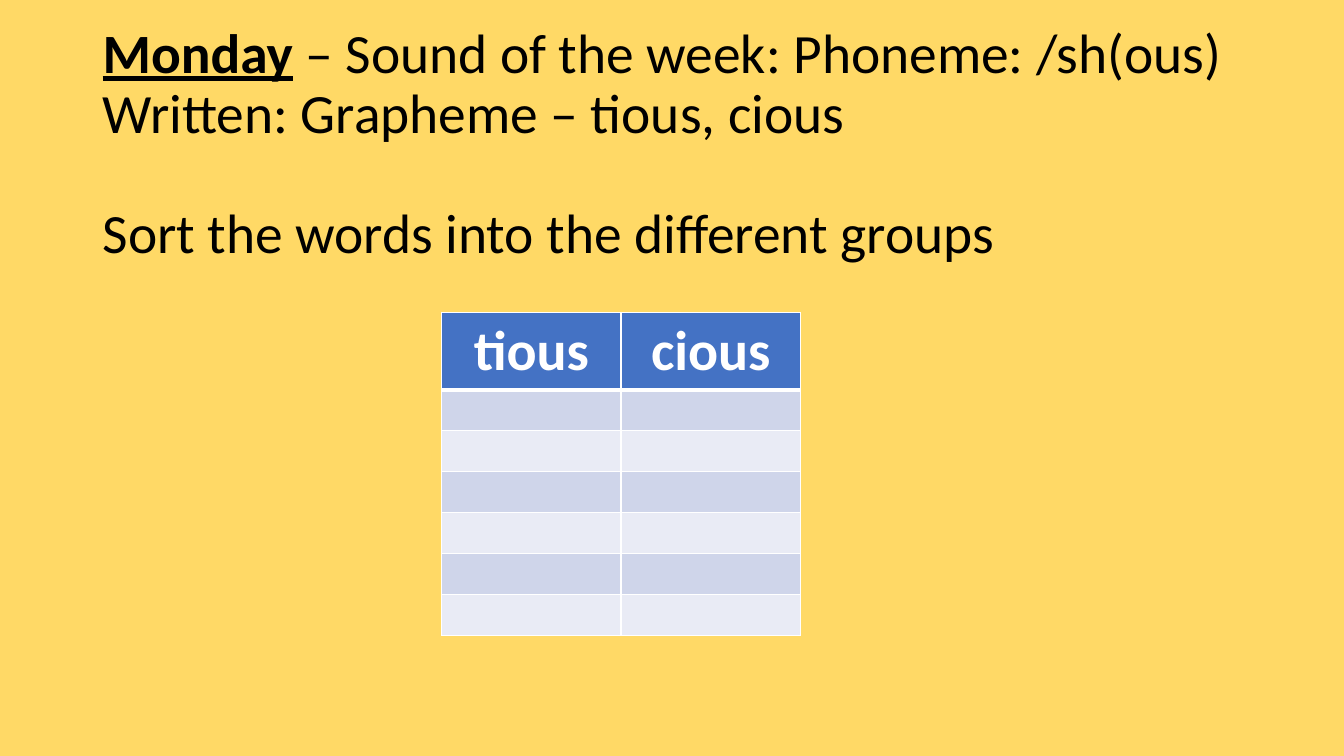
import pptx
import pptx.dml.color
import pptx.enum.text
import pptx.oxml.ns
import pptx.util
from lxml import etree
from pptx.dml.color import RGBColor
from pptx.util import Inches

BACKGROUND = RGBColor(0xFF, 0xD9, 0x66)
BLACK = RGBColor(0x00, 0x00, 0x00)
WHITE = RGBColor(0xFF, 0xFF, 0xFF)
HEADER_BLUE = RGBColor(0x44, 0x72, 0xC4)
BANDS = (RGBColor(0xCF, 0xD5, 0xEA), RGBColor(0xE9, 0xEB, 0xF5))

FONT = "Calibri"
TITLE_SIZE = 39.6
HEADER_SIZE = 40
HEADINGS = ("tious", "cious")
BODY_ROWS = 6
TABLE_WIDTH = 3.56
TABLE_HEIGHT = 3.2
HEADER_HEIGHT = 0.76


def add_run(paragraph, text, size, color, bold=False, underline=False):
    run = paragraph.add_run()
    run.text = text
    run.font.name = FONT
    run.font.size = pptx.util.Pt(size)
    run.font.color.rgb = color
    run.font.bold = bold
    run.font.underline = underline


def add_title(slide):
    box = slide.shapes.add_textbox(Inches(0.92), Inches(0.72), Inches(11.5), Inches(1.45))
    frame = box.text_frame
    frame.word_wrap = True
    frame.vertical_anchor = pptx.enum.text.MSO_ANCHOR.MIDDLE

    sound = frame.paragraphs[0]
    add_run(sound, "Monday", TITLE_SIZE, BLACK, bold=True, underline=True)
    add_run(sound, " – Sound of the week: Phoneme: /sh(ous) Written: Grapheme – tious, cious",
            TITLE_SIZE, BLACK)

    task = frame.add_paragraph()
    task.space_before = pptx.util.Pt(43.5)
    add_run(task, "Sort the words into the different groups", TITLE_SIZE, BLACK)

    for paragraph in frame.paragraphs:
        paragraph.line_spacing = 0.9


def set_borders(cell, top, bottom):
    """Draw white cell borders, with top and bottom widths in points."""
    properties = cell._tc.get_or_add_tcPr()
    for side, width in (("L", 1), ("R", 1), ("T", top), ("B", bottom)):
        line = etree.SubElement(properties, pptx.oxml.ns.qn(f"a:ln{side}"),
                                w=str(pptx.util.Pt(width)))
        fill = etree.SubElement(line, pptx.oxml.ns.qn("a:solidFill"))
        etree.SubElement(fill, pptx.oxml.ns.qn("a:srgbClr"), val=str(WHITE))


def style_cell(cell, color, top=1, bottom=1):
    set_borders(cell, top, bottom)
    cell.fill.solid()
    cell.fill.fore_color.rgb = color


def add_sorting_table(slide):
    table = slide.shapes.add_table(
        BODY_ROWS + 1, len(HEADINGS),
        Inches(4.38), Inches(3.1), Inches(TABLE_WIDTH), Inches(TABLE_HEIGHT)).table

    # Row heights
    table.rows[0].height = Inches(HEADER_HEIGHT)
    for row in range(1, BODY_ROWS + 1):
        table.rows[row].height = Inches((TABLE_HEIGHT - HEADER_HEIGHT) / BODY_ROWS)

    for column, heading in enumerate(HEADINGS):
        # Header cell
        header = table.cell(0, column)
        style_cell(header, HEADER_BLUE, bottom=3)
        paragraph = header.text_frame.paragraphs[0]
        paragraph.alignment = pptx.enum.text.PP_ALIGN.CENTER
        add_run(paragraph, heading, HEADER_SIZE, WHITE, bold=True)

        # Empty cells in alternating bands
        for row in range(1, BODY_ROWS + 1):
            style_cell(table.cell(row, column), BANDS[(row - 1) % 2], top=3 if row == 1 else 1)


def main():
    presentation = pptx.Presentation()
    presentation.slide_width = Inches(13.33)
    presentation.slide_height = Inches(7.5)
    slide = presentation.slides.add_slide(presentation.slide_layouts[6])

    # Background
    slide.background.fill.solid()
    slide.background.fill.fore_color.rgb = BACKGROUND

    add_title(slide)
    add_sorting_table(slide)
    presentation.save("out.pptx")


if __name__ == "__main__":
    main()
